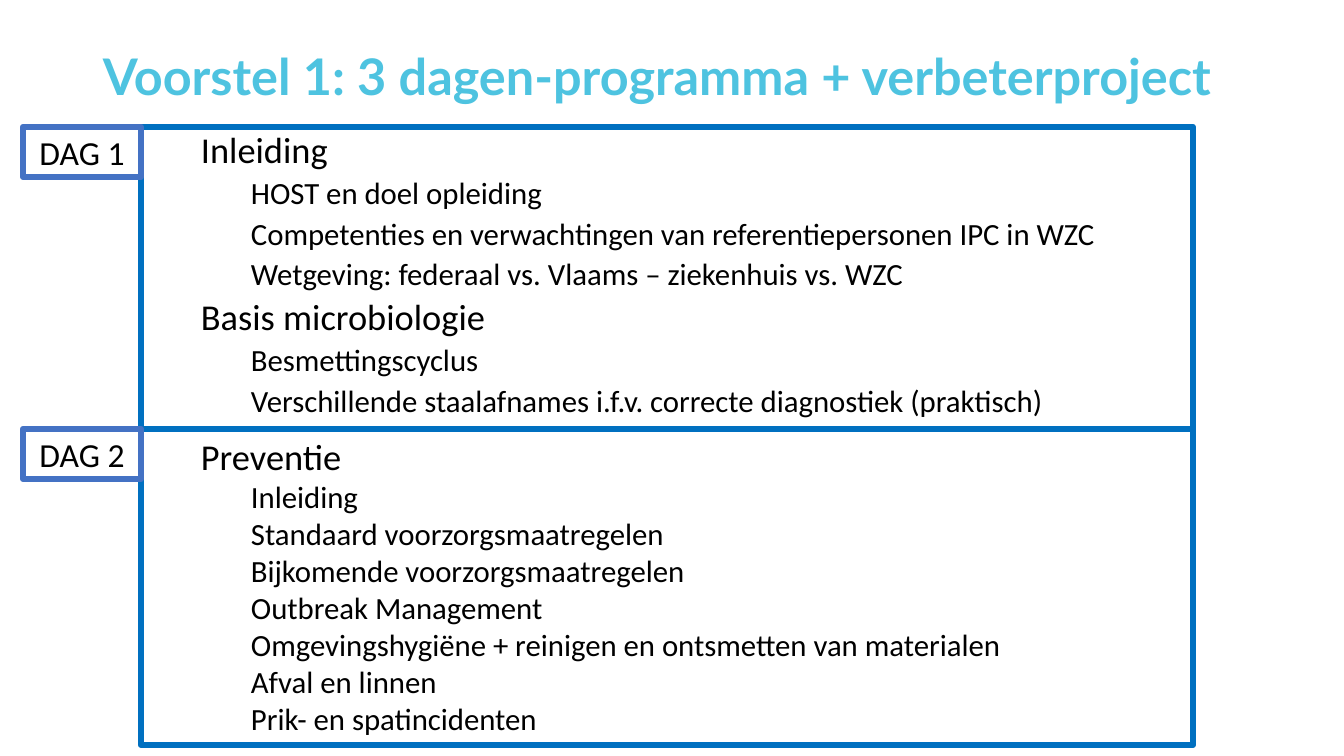
from lxml.etree import SubElement
from pptx import Presentation
from pptx.dml.color import RGBColor
from pptx.enum.shapes import MSO_SHAPE
from pptx.enum.text import MSO_ANCHOR, PP_ALIGN
from pptx.oxml.ns import qn
from pptx.util import Emu, Pt

SCALE = 914400 / 100.8
CYAN = RGBColor(0x4E, 0xC3, 0xE0)
BLUE = RGBColor(0x00, 0x70, 0xC0)
INDIGO = RGBColor(0x44, 0x72, 0xC4)
BLACK = RGBColor(0, 0, 0)
WHITE = RGBColor(255, 255, 255)

TAG_WIDTH, TAG_HEIGHT = 118, 50
INDENT = 50
TOPIC_SIZES = {1: 26, 2: 22}

DAY_ONE = [
    (1, "Inleiding"),
    (2, "HOST en doel opleiding"),
    (2, "Competenties en verwachtingen van referentiepersonen IPC in WZC"),
    (2, "Wetgeving: federaal vs. Vlaams – ziekenhuis vs. WZC"),
    (1, "Basis microbiologie"),
    (2, "Besmettingscyclus"),
    (2, "Verschillende staalafnames i.f.v. correcte diagnostiek (praktisch)"),
]
DAY_TWO = [
    (1, "Preventie"),
    (2, "Inleiding"),
    (2, "Standaard voorzorgsmaatregelen"),
    (2, "Bijkomende voorzorgsmaatregelen"),
    (2, "Outbreak Management"),
    (2, "Omgevingshygiëne + reinigen en ontsmetten van materialen"),
    (2, "Afval en linnen"),
    (2, "Prik- en spatincidenten"),
]


def px(length):
    return Emu(round(length * SCALE))


def add_span(para, text, size, color=BLACK, font="Calibri", bold=False):
    span = para.add_run()
    span.text = text
    span.font.size = Pt(size)
    span.font.name = font
    span.font.bold = bold
    span.font.color.rgb = color


def add_frame(page, left, top, width, height, line_color):
    box = page.shapes.add_shape(
        MSO_SHAPE.RECTANGLE, px(left), px(top), px(width), px(height))
    box.shadow.inherit = False
    box.line.color.rgb = line_color
    box.line.width = Pt(4.5)
    box.text_frame.word_wrap = True
    box.text_frame.vertical_anchor = MSO_ANCHOR.TOP
    return box


def add_title(page, left, top, width, height, text):
    box = page.shapes.add_textbox(px(left), px(top), px(width), px(height))
    frame = box.text_frame
    frame.word_wrap = True
    frame.vertical_anchor = MSO_ANCHOR.BOTTOM
    para = frame.paragraphs[0]
    para.line_spacing = 0.9
    add_span(para, text, 36, CYAN, "Lato", True)


def add_day(page, left, top, width, height, label, topics, line_spacing, gap):
    box = add_frame(page, left + TAG_WIDTH, top, width - TAG_WIDTH, height, BLUE)
    box.fill.background()
    SubElement(box.line._get_or_add_ln(), qn("a:round"))
    frame = box.text_frame
    for index, (level, text) in enumerate(topics):
        para = frame.add_paragraph() if index else frame.paragraphs[0]
        para.level = level
        para.alignment = PP_ALIGN.LEFT
        para.line_spacing = line_spacing
        para.space_before = Pt(gap if index else 0)
        properties = para._p.get_or_add_pPr()
        properties.set("marL", str(px(level * INDENT)))
        properties.set("indent", "0")
        add_span(para, text, TOPIC_SIZES[level])

    tag = add_frame(page, left, top, TAG_WIDTH, TAG_HEIGHT, INDIGO)
    tag.fill.solid()
    tag.fill.fore_color.rgb = WHITE
    para = tag.text_frame.paragraphs[0]
    para.alignment = PP_ALIGN.CENTER
    add_span(para, label, 24)


def main():
    deck = Presentation()
    deck.slide_width, deck.slide_height = px(1344), px(756)
    page = deck.slides.add_slide(deck.slide_layouts[6])
    add_title(page, 93, 40, 1155, 71,
              "Voorstel 1: 3 dagen-programma + verbeterproject")
    add_day(page, 23, 127, 1170, 302, "DAG 1", DAY_ONE, 0.9, 5)
    add_day(page, 23, 429, 1170, 316, "DAG 2", DAY_TWO, 1.0, 0)
    deck.save("out.pptx")


if __name__ == "__main__":
    main()
